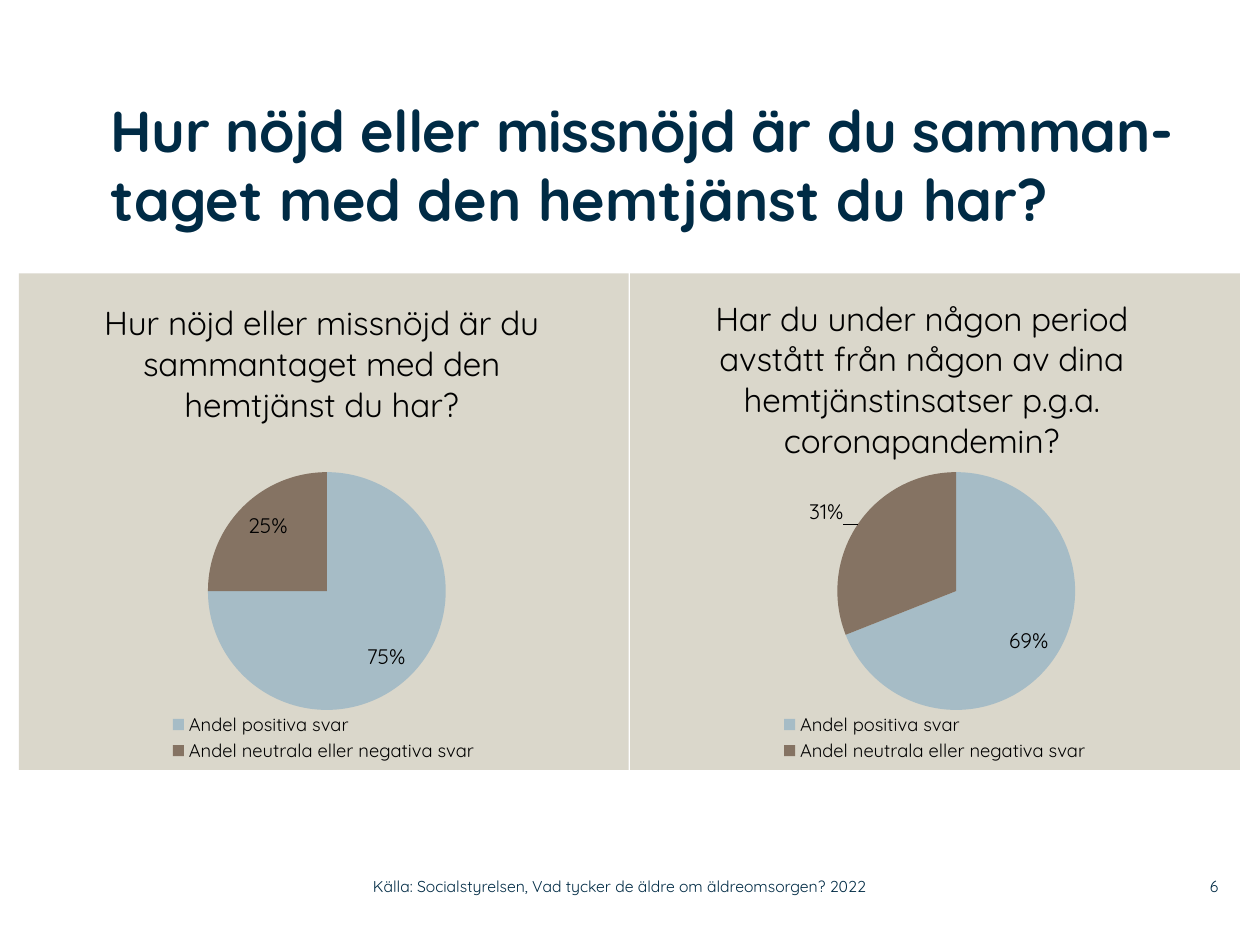
from lxml import etree
from pptx import Presentation
from pptx.chart.data import CategoryChartData
from pptx.dml.color import RGBColor
from pptx.enum.chart import XL_CHART_TYPE, XL_LABEL_POSITION, XL_LEGEND_POSITION
from pptx.enum.text import MSO_ANCHOR, PP_ALIGN
from pptx.oxml import parse_xml
from pptx.oxml.ns import nsdecls, qn
from pptx.util import Inches, Pt

PIE = XL_CHART_TYPE.PIE
INSIDE_END = XL_LABEL_POSITION.INSIDE_END
BOTTOM = XL_LEGEND_POSITION.BOTTOM
MIDDLE, TOP = MSO_ANCHOR.MIDDLE, MSO_ANCHOR.TOP
LEFT, RIGHT = PP_ALIGN.LEFT, PP_ALIGN.RIGHT

FONT = "Quicksand"
COLORS = {"navy": "002B45", "black": "000000", "panel": "DAD7CB",
          "positive": "A6BCC6", "negative": "857363"}

TITLE_RUNS = [("Hur nöjd eller missnöjd är du samman-", -30),
              ("taget med den hemtjänst du har?", 0)]
CATEGORIES = ["Andel positiva svar", "Andel neutrala eller negativa svar"]
# Layouts are fractions of the chart area
CHARTS = [
    {"title": "Hur nöjd eller missnöjd är du sammantaget med den hemtjänst du har?",
     "values": (75, 25), "plot": (0.31, 0.4, 0.39, 0.48),
     "title_at": (0.13, 0.04), "legend_at": (0.24, 0.88, 0.52, 0.11)},
    {"title": "Har du under någon period avstått från någon av dina "
              "hemtjänstinsatser p.g.a. coronapandemin?",
     "values": (69, 31), "plot": (0.34, 0.4, 0.39, 0.48),
     "title_at": (0.13, 0.03), "legend_at": (0.24, 0.88, 0.52, 0.11),
     "negative_label_shift": (-0.09, -0.06)},
]
CHART_LEFT, CHART_TOP, CHART_WIDTH, CHART_HEIGHT = 0.15, 2.17, 4.84, 3.94
CHART_STEP = 4.85
FOOTERS = [("Källa: Socialstyrelsen, Vad tycker de äldre om äldreomsorgen? 2022",
            2.96, 4.43, LEFT),
           ("6", 9.2, 0.47, RIGHT)]


def style_font(font, size, color, bold=False):
    font.name, font.size, font.bold = FONT, Pt(size), bold
    font.color.rgb = RGBColor.from_string(COLORS[color])


def set_frame(shape, anchor):
    frame = shape.text_frame
    frame.word_wrap = True
    frame.vertical_anchor = anchor
    frame.margin_left = frame.margin_top = frame.margin_right = frame.margin_bottom = 0
    return frame


def set_layout(parent, index, fractions, edge=True):
    """Put a manual layout (x, y and optionally w, h) in a chart element."""
    for old in parent.findall(qn("c:layout")):
        parent.remove(old)
    layout = etree.Element(qn("c:layout"))
    manual = etree.SubElement(layout, qn("c:manualLayout"))
    if parent.tag == qn("c:plotArea"):
        etree.SubElement(manual, qn("c:layoutTarget")).set("val", "inner")
    if edge:
        for mode in ("xMode", "yMode"):
            etree.SubElement(manual, qn(f"c:{mode}")).set("val", "edge")
    for name, value in zip("xywh", fractions):
        etree.SubElement(manual, qn(f"c:{name}")).set("val", str(value))
    parent.insert(index, layout)


def fill_chart_area(chart):
    chart.element.find(qn("c:chart")).addnext(parse_xml(
        f'<c:spPr {nsdecls("c", "a")}><a:solidFill><a:srgbClr val="{COLORS["panel"]}"/>'
        "</a:solidFill><a:ln><a:noFill/></a:ln></c:spPr>"))


def shift_label(point, offset):
    """Move one percentage label away from its usual place."""
    label = point.data_label
    style_font(label.font, 12, "black")
    label.position = INSIDE_END
    element = point.data_label.font and label._dLbl
    set_layout(element, 1, offset, edge=False)
    element.find(qn("c:showVal")).set("val", "0")
    element.find(qn("c:showPercent")).set("val", "1")


def add_pie(slide, left, content):
    data = CategoryChartData()
    data.categories = CATEGORIES
    data.add_series("Series 1", content["values"])
    chart = slide.shapes.add_chart(
        PIE, Inches(left), Inches(CHART_TOP), Inches(CHART_WIDTH),
        Inches(CHART_HEIGHT), data).chart
    style_font(chart.font, 18, "black")
    fill_chart_area(chart)

    run = chart.chart_title.text_frame.paragraphs[0].add_run()
    run.text = content["title"]
    style_font(run.font, 19, "black")
    set_layout(chart.chart_title.element if hasattr(chart.chart_title, "element")
               else chart.element.find(".//" + qn("c:title")), 1, content["title_at"])

    chart.has_legend = True
    chart.legend.position = BOTTOM
    chart.legend.include_in_layout = False
    style_font(chart.legend.font, 10.5, "black")
    set_layout(chart.element.find(".//" + qn("c:legend")), 1, content["legend_at"])
    set_layout(chart.element.find(".//" + qn("c:plotArea")), 0, content["plot"])

    plot = chart.plots[0]
    plot.vary_by_categories = True
    series = plot.series[0]
    for index, color in enumerate(("positive", "negative")):
        area = series.points[index].format
        area.fill.solid()
        area.fill.fore_color.rgb = RGBColor.from_string(COLORS[color])
        area.line.fill.background()
    labels = series.data_labels
    style_font(labels.font, 12, "black")
    labels.number_format, labels.number_format_is_linked = "0%", False
    labels.show_value, labels.show_percentage = False, True
    labels.position = INSIDE_END
    if "negative_label_shift" in content:
        shift_label(series.points[1], content["negative_label_shift"])


def main():
    presentation = Presentation()
    presentation.slide_width, presentation.slide_height = Inches(10), Inches(7.5)
    slide = presentation.slides.add_slide(presentation.slide_layouts[5])

    title = slide.shapes.title
    title.left, title.top = Inches(0.88), Inches(0.75)
    title.width, title.height = Inches(8.94), Inches(1.42)
    paragraph = set_frame(title, TOP).paragraphs[0]
    paragraph.alignment = LEFT
    for text, spacing in TITLE_RUNS:
        run = paragraph.add_run()
        run.text = text
        style_font(run.font, 33, "navy", bold=True)
        run.font._element.set("spc", str(spacing))

    for index, content in enumerate(CHARTS):
        add_pie(slide, CHART_LEFT + index * CHART_STEP, content)

    for text, left, width, alignment in FOOTERS:
        box = slide.shapes.add_textbox(Inches(left), Inches(6.89), Inches(width), Inches(0.29))
        paragraph = set_frame(box, MIDDLE).paragraphs[0]
        paragraph.alignment = alignment
        run = paragraph.add_run()
        run.text = text
        style_font(run.font, 9, "navy")

    presentation.save("out.pptx")


if __name__ == "__main__":
    main()
